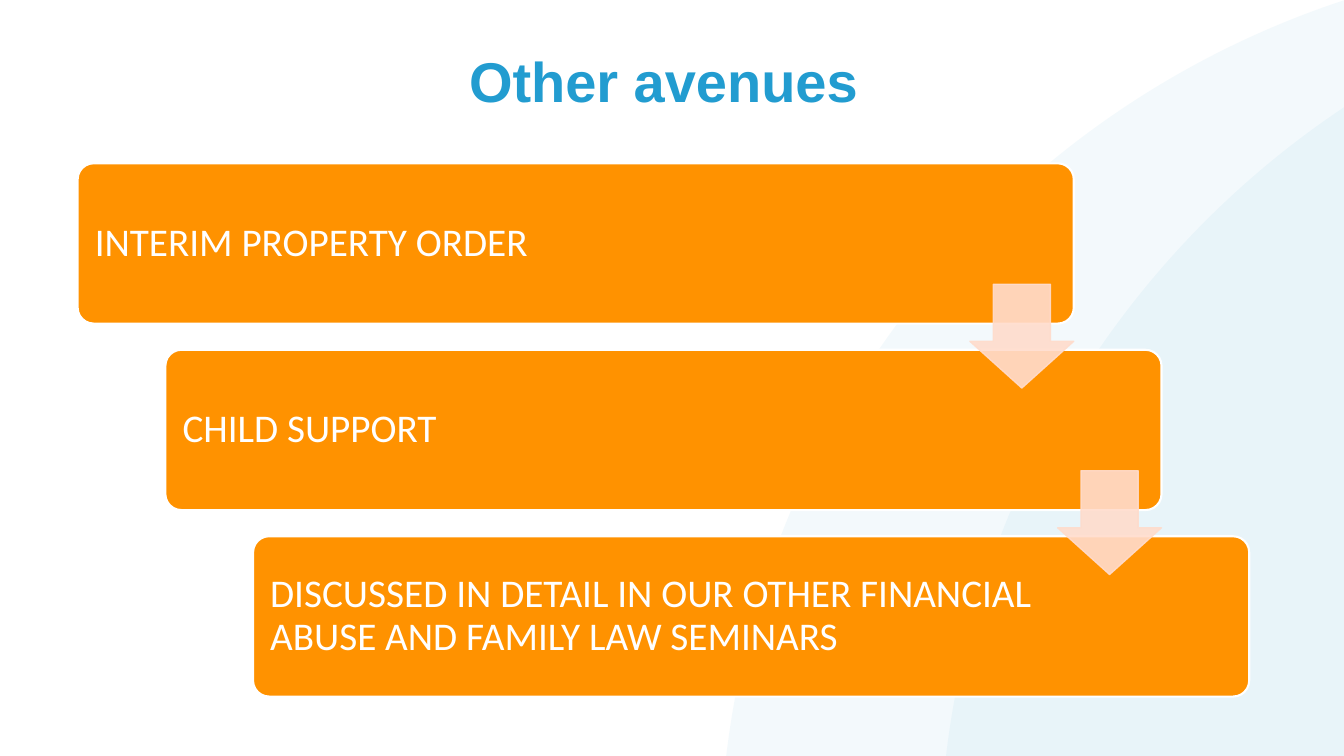
from lxml import etree
from pptx import Presentation
from pptx.dml.color import RGBColor
from pptx.enum import shapes, text
from pptx.oxml.ns import qn
from pptx.util import Inches, Pt

BLUE = RGBColor(0x22, 0x9C, 0xD0)
ORANGE = RGBColor(0xFF, 0x92, 0x00)
PEACH = RGBColor(0xFF, 0xDC, 0xCC)
WHITE = RGBColor(0xFF, 0xFF, 0xFF)

STEPS = [
    ("INTERIM PROPERTY ORDER", 8.17),
    ("CHILD SUPPORT", 7.88),
    ("DISCUSSED IN DETAIL IN OUR OTHER FINANCIAL ABUSE AND FAMILY LAW SEMINARS", 7.88),
]
STEP_X, STEP_Y = 0.87, 1.85


def set_alpha(fill_parent, percent):
    """Make the solid fill below the given XML element translucent."""
    color = fill_parent.find(qn("a:solidFill"))[0]
    etree.SubElement(color, qn("a:alpha")).set("val", str(percent * 1000))


def add_filled(slide, kind, left, top, width, height, color):
    sp = slide.shapes.add_shape(
        kind, Inches(left), Inches(top), Inches(width), Inches(height))
    sp.shadow.inherit = False
    sp.fill.solid()
    sp.fill.fore_color.rgb = color
    return sp


def add_background_circle(slide, left, position):
    sp = add_filled(slide, shapes.MSO_SHAPE.OVAL, left, -0.45, 18.02, 18.02, BLUE)
    sp.line.fill.background()
    set_alpha(sp.element.spPr, 5)
    slide.shapes.element.insert(position, sp.element)


def add_title(slide, words):
    title = slide.shapes.title
    title.left, title.top = Inches(0.77), Inches(0.49)
    title.width, title.height = Inches(11.62), Inches(0.97)
    tf = title.text_frame
    tf.text = words
    tf.word_wrap = True
    tf.vertical_anchor = text.MSO_ANCHOR.TOP
    p = tf.paragraphs[0]
    p.alignment = text.PP_ALIGN.CENTER
    format_paragraph(p, "Arial", 40, BLUE)
    p.font.bold = True


def format_paragraph(p, name, size, color):
    p.line_spacing = 0.9
    p.font.name = name
    p.font.size = Pt(size)
    p.font.color.rgb = color


def add_step(slide, left, top, words, text_width):
    bar = add_filled(slide, shapes.MSO_SHAPE.ROUNDED_RECTANGLE,
                     left, top, 9.88, 1.59, ORANGE)
    bar.adjustments[0] = 0.1
    bar.line.color.rgb = WHITE
    bar.line.width = Pt(1.5)

    box = slide.shapes.add_textbox(Inches(left + 0.05), Inches(top + 0.05),
                                   Inches(text_width), Inches(1.49))
    tf = box.text_frame
    tf.word_wrap = True
    tf.vertical_anchor = text.MSO_ANCHOR.MIDDLE
    tf.margin_left = tf.margin_right = Inches(0.12)
    tf.margin_top = tf.margin_bottom = Inches(0.12)
    tf.text = words
    format_paragraph(tf.paragraphs[0], "Calibri", 28, WHITE)


def add_down_arrow(slide, left, top):
    sp = add_filled(slide, shapes.MSO_SHAPE.DOWN_ARROW, left, top, 1.03, 1.03, PEACH)
    sp.adjustments[0] = 0.55
    sp.adjustments[1] = 0.45
    sp.line.color.rgb = PEACH
    sp.line.width = Pt(1)
    spPr = sp.element.spPr
    set_alpha(spPr, 90)
    set_alpha(spPr.find(qn("a:ln")), 90)


def main():
    prs = Presentation()
    prs.slide_width, prs.slide_height = Inches(13.33), Inches(7.5)
    slide = prs.slides.add_slide(prs.slide_layouts[5])
    slide.background.fill.solid()
    slide.background.fill.fore_color.rgb = WHITE

    # Circles go behind the title, after the two property nodes of the tree.
    for position, left in enumerate((7.14, 9.32), start=2):
        add_background_circle(slide, left, position)
    add_title(slide, "Other avenues")
    for i, (words, text_width) in enumerate(STEPS):
        add_step(slide, 0.77 + i * STEP_X, 1.62 + i * STEP_Y, words, text_width)
    for i in range(len(STEPS) - 1):
        add_down_arrow(slide, 9.62 + i * STEP_X, 2.82 + i * STEP_Y)

    prs.save("out.pptx")


if __name__ == "__main__":
    main()
